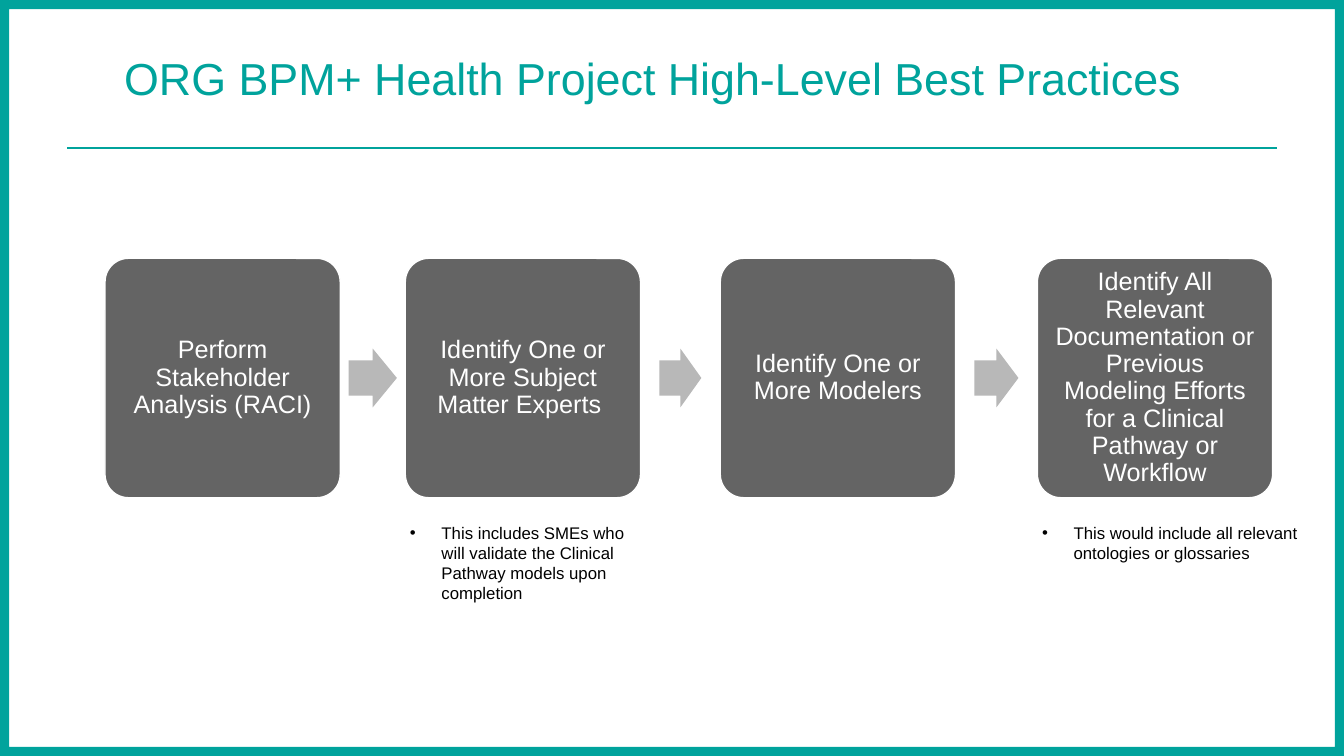
from dataclasses import dataclass
from typing import Any, Optional

import pptx
import pptx.dml.color
import pptx.enum.shapes
import pptx.enum.text
import pptx.oxml.ns
import pptx.util
from lxml import etree

EMU_PER_PX = 9525
SLIDE_WIDTH, SLIDE_HEIGHT = 1280, 720
STEP_TOP, STEP_WIDTH, STEP_HEIGHT = 246, 224, 228
ARROW_TOP, ARROW_HEIGHT = 332, 56
NOTE_TOP, NOTE_OUTDENT, NOTE_INDENT = 493, 5, 30
STEP_INSET = 7

ALIGN = pptx.enum.text.PP_ALIGN
ANCHOR = pptx.enum.text.MSO_ANCHOR
SHAPE = pptx.enum.shapes.MSO_SHAPE


@dataclass(frozen=True)
class Theme:
    font: str = "Arial"
    teal: str = "00A39C"
    step: str = "646464"
    arrow: str = "B8B8B8"
    white: str = "FFFFFF"
    black: str = "000000"
    title_size: int = 32
    step_size: int = 18
    note_size: int = 12


@dataclass(frozen=True)
class Box:
    left: int
    top: int
    width: int
    height: int

    def emu(self) -> tuple[int, ...]:
        return tuple(map(px, (self.left, self.top, self.width, self.height)))


@dataclass(frozen=True)
class Note:
    text: str
    width: int
    height: int


@dataclass(frozen=True)
class Step:
    text: str
    left: int
    note: Optional[Note] = None


@dataclass(frozen=True)
class Arrow:
    left: int
    width: int


THEME = Theme()
TITLE = "ORG BPM+ Health Project High-Level Best Practices "
STEPS = (
    Step("Perform Stakeholder Analysis (RACI)", 100),
    Step(
        "Identify One or More Subject Matter Experts ",
        386,
        Note("This includes SMEs who will validate the Clinical Pathway models upon completion", 234, 68),
    ),
    Step("Identify One or More Modelers", 686),
    Step(
        "Identify All Relevant Documentation or Previous Modeling Efforts for a Clinical Pathway or Workflow",
        988,
        Note("This would include all relevant ontologies or glossaries", 266, 48),
    ),
)
ARROWS = (Arrow(332, 46), Arrow(628, 40), Arrow(928, 42))


def px(length: int) -> int:
    return pptx.util.Emu(length * EMU_PER_PX)


def rgb(value: str) -> pptx.dml.color.RGBColor:
    return pptx.dml.color.RGBColor.from_string(value)


def write_text(
    shape: Any,
    text: str,
    *,
    size: int,
    color: str,
    align: Any = ALIGN.CENTER,
    anchor: Any = ANCHOR.MIDDLE,
    line_spacing: float = 0.9,
    inset: Optional[int] = None,
    bullet: bool = False,
) -> None:
    frame = shape.text_frame
    frame.word_wrap = True
    frame.auto_size = pptx.enum.text.MSO_AUTO_SIZE.NONE
    frame.vertical_anchor = anchor
    if inset is not None:
        frame.margin_left = frame.margin_right = px(inset)
        frame.margin_top = frame.margin_bottom = px(inset)
    paragraph = frame.paragraphs[0]
    paragraph.text = text
    paragraph.alignment = align
    paragraph.line_spacing = line_spacing
    if bullet:
        properties = paragraph._p.get_or_add_pPr()
        properties.set("marL", str(px(NOTE_INDENT)))
        properties.set("indent", str(-px(NOTE_INDENT)))
        for tag, name, value in (("a:buFont", "typeface", THEME.font), ("a:buChar", "char", "•")):
            etree.SubElement(properties, pptx.oxml.ns.qn(tag)).set(name, value)
    font = paragraph.runs[0].font
    font.name = THEME.font
    font.size = pptx.util.Pt(size)
    font.color.rgb = rgb(color)


def add_block(
    slide: Any,
    kind: Any,
    box: Box,
    fill: str,
    adjustments: tuple[float, ...],
    outline: Optional[str] = None,
) -> Any:
    shape = slide.shapes.add_shape(kind, *box.emu())
    shape.shadow.inherit = False
    for index, value in enumerate(adjustments):
        shape.adjustments[index] = value
    shape.fill.solid()
    shape.fill.fore_color.rgb = rgb(fill)
    if outline:
        shape.line.color.rgb = rgb(outline)
        shape.line.width = pptx.util.Pt(1)
    else:
        shape.line.fill.background()
    return shape


def add_rule(slide: Any, left: int, right: int, top: int) -> None:
    rule = slide.shapes.add_connector(
        pptx.enum.shapes.MSO_CONNECTOR.STRAIGHT, px(left), px(top), px(right), px(top)
    )
    rule.line.color.rgb = rgb(THEME.teal)
    rule.line.width = pptx.util.Pt(2)
    etree.SubElement(rule._element.spPr, pptx.oxml.ns.qn("a:effectLst"))


def add_title(slide: Any, box: Box) -> None:
    title = slide.shapes.title
    title.left, title.top, title.width, title.height = box.emu()
    write_text(title, TITLE, size=THEME.title_size, color=THEME.teal)


def add_step(slide: Any, step: Step) -> None:
    box = Box(step.left, STEP_TOP, STEP_WIDTH, STEP_HEIGHT)
    shape = add_block(slide, SHAPE.ROUNDED_RECTANGLE, box, THEME.step, (0.1,), THEME.white)
    write_text(shape, step.text, size=THEME.step_size, color=THEME.white, inset=STEP_INSET)


def add_note(slide: Any, left: int, note: Note) -> None:
    box = Box(left - NOTE_OUTDENT, NOTE_TOP, note.width, note.height)
    write_text(
        slide.shapes.add_textbox(*box.emu()),
        note.text,
        size=THEME.note_size,
        color=THEME.black,
        align=ALIGN.LEFT,
        anchor=ANCHOR.TOP,
        line_spacing=1.0,
        bullet=True,
    )


def main() -> None:
    presentation = pptx.Presentation()
    presentation.slide_width = px(SLIDE_WIDTH)
    presentation.slide_height = px(SLIDE_HEIGHT)
    slide = presentation.slides.add_slide(presentation.slide_layouts[5])
    add_block(slide, SHAPE.FRAME, Box(0, 0, SLIDE_WIDTH, SLIDE_HEIGHT), THEME.teal, (0.012,))
    add_rule(slide, 64, 1216, 141)
    add_title(slide, Box(76, 44, 1104, 66))
    for step in STEPS:
        add_step(slide, step)
        if step.note:
            add_note(slide, step.left, step.note)
    for arrow in ARROWS:
        box = Box(arrow.left, ARROW_TOP, arrow.width, ARROW_HEIGHT)
        add_block(slide, SHAPE.RIGHT_ARROW, box, THEME.arrow, (0.6, 0.5))
    presentation.save("out.pptx")


if __name__ == "__main__":
    main()
